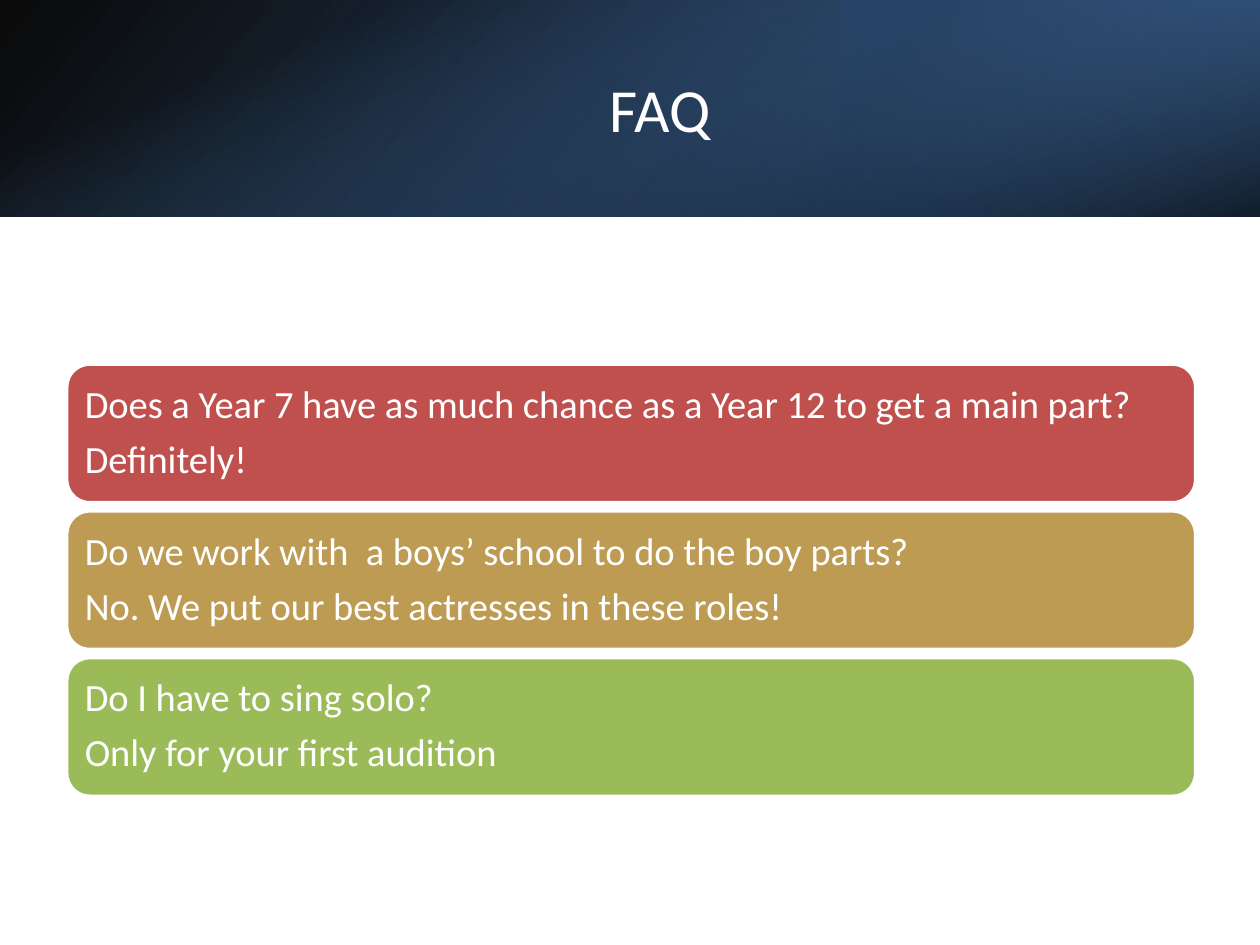
from pptx import Presentation
from pptx.dml.color import RGBColor
from pptx.enum.shapes import MSO_SHAPE as Kind
from pptx.enum.text import MSO_ANCHOR as Anchor, PP_ALIGN as Align
from pptx.oxml.ns import qn
from pptx.util import Inches, Pt
from lxml.etree import SubElement

FONT, WHITE = "Calibri", "FFFFFF"
TITLE = "FAQ"
CARDS = [
    ("C0504D", "Does a Year 7 have as much chance as a Year 12 to get a main part?",
     "Definitely!"),
    ("BD9B53", "Do we work with  a boys’ school to do the boy parts?",
     "No. We put our best actresses in these roles!"),
    ("9BBB59", "Do I have to sing solo?", "Only for your first audition"),
]
# Banner layers: box, turn, flipped, clockwise angle, stops (place, colour, opacity %)
LAYERS = [
    ((0, 0, 10, 1.72), 0, True, 140, [(0, "000000", 96), (1, "376092", 100)]),
    ((6.67, 0, 3.33, 1.72), 180, True, 320, [(0.19, "254061", 68), (1, "4F81BD", 79)]),
    ((4.14, -4.14, 1.72, 10), 90, False, 340, [(0.23, "4F81BD", 0), (0.99, "000000", 74)]),
]
LEFT, TOP, WIDTH, HEIGHT, STEP = 0.53, 2.89, 8.96, 1.1, 1.165

deck = Presentation()
deck.slide_width, deck.slide_height = Inches(10), Inches(7.5)
slide = deck.slides.add_slide(deck.slide_layouts[6])


def rgb(code):
    return RGBColor.from_string(code)


def add_box(kind, box):
    shape = slide.shapes.add_shape(kind, *map(Inches, box))
    shape.shadow.inherit = False
    return shape


def add_run(para, text, size):
    run = para.add_run()
    run.text = text
    run.font.name, run.font.size = FONT, Pt(size)
    run.font.color.rgb = rgb(WHITE)


def add_layer(box, turn, flip, angle, stops):
    shape = add_box(Kind.RECTANGLE, box)
    shape.rotation = turn
    shape.line.fill.background()
    props = shape._element.spPr
    if flip:
        props.xfrm.set("flipH", "1")
    shape.fill.gradient()
    shape.fill.gradient_angle = 360 - angle
    for stop, (place, code, _) in zip(shape.fill.gradient_stops, stops):
        stop.position = place
        stop.color.rgb = rgb(code)
    # Opacity of each stop
    for color, (_, _, alpha) in zip(props.iter(qn("a:srgbClr")), stops):
        SubElement(color, qn("a:alpha")).set("val", str(alpha * 1000))


def add_card(top, code, lines):
    card = add_box(Kind.ROUNDED_RECTANGLE, (LEFT, top, WIDTH, HEIGHT))
    card.fill.solid()
    card.fill.fore_color.rgb = rgb(code)
    card.line.color.rgb = rgb(WHITE)
    card.line.width = Pt(2)
    frame = card.text_frame
    frame.word_wrap = True
    frame.vertical_anchor = Anchor.MIDDLE
    frame.margin_left = frame.margin_right = Inches(0.09)
    frame.margin_top = frame.margin_bottom = Inches(0.09)
    for i, text in enumerate(lines):
        para = frame.add_paragraph() if i else frame.paragraphs[0]
        para.alignment = Align.LEFT
        para.line_spacing, para.space_after = 0.9, Pt(7.7)
        add_run(para, text, 22)


# Banner
for layer in LAYERS:
    add_layer(*layer)

# Title
frame = slide.shapes.add_textbox(*map(Inches, (1.12, 0.38, 8.24, 0.96))).text_frame
frame.word_wrap = True
frame.vertical_anchor = Anchor.MIDDLE
frame.paragraphs[0].alignment = Align.CENTER
add_run(frame.paragraphs[0], TITLE, 35)

# Question cards
for row, (code, *lines) in enumerate(CARDS):
    add_card(TOP + row * STEP, code, lines)

deck.save("out.pptx")
